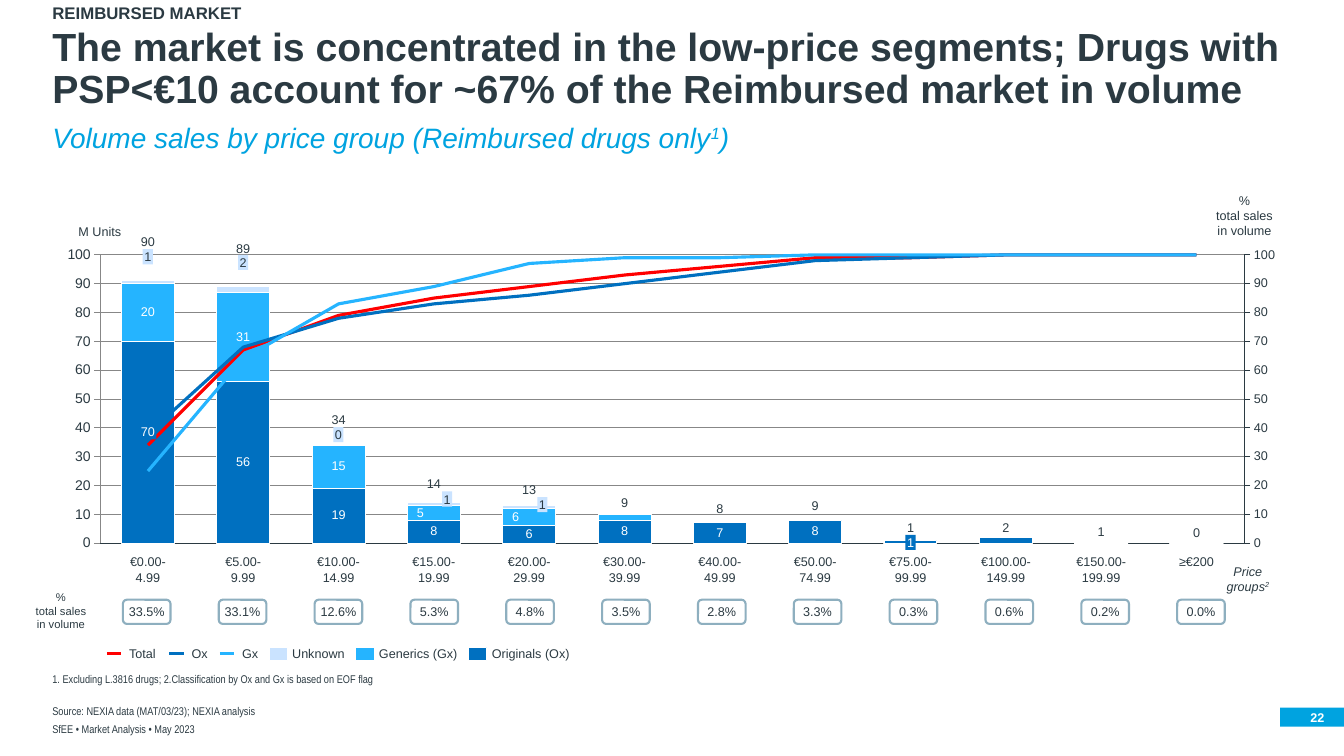
"""Build the slide on reimbursed volume sales by price group."""
from copy import deepcopy

from pptx import Presentation
from pptx import util as u
from pptx.chart import axis as ax, data as cd
from pptx.dml.color import RGBColor
from pptx.enum import chart as ce, shapes, text
from pptx.oxml import ns, parse_xml

INK, CYAN = RGBColor(0x2B, 0x3A, 0x42), RGBColor(0x00, 0xA3, 0xE0)
WHITE, RED = RGBColor(0xFF, 0xFF, 0xFF), RGBColor(0xFF, 0x00, 0x00)
BLUE, SKY = RGBColor(0x00, 0x70, 0xC0), RGBColor(0x25, 0xB4, 0xFF)
PALE, STEEL = RGBColor(0xCA, 0xE3, 0xFF), RGBColor(0x8E, 0xAF, 0xBF)
LEFT, CENTER, RIGHT = text.PP_ALIGN.LEFT, text.PP_ALIGN.CENTER, text.PP_ALIGN.RIGHT
TOP, MIDDLE, BOTTOM = text.MSO_ANCHOR.TOP, text.MSO_ANCHOR.MIDDLE, text.MSO_ANCHOR.BOTTOM

GROUPS = [("€0.00-\n4.99", "33.5%"), ("€5.00-\n9.99", "33.1%"), ("€10.00-\n14.99", "12.6%"),
          ("€15.00-\n19.99", "5.3%"), ("€20.00-\n29.99", "4.8%"), ("€30.00-\n39.99", "3.5%"),
          ("€40.00-\n49.99", "2.8%"), ("€50.00-\n74.99", "3.3%"), ("€75.00-\n99.99", "0.3%"),
          ("€100.00-\n149.99", "0.6%"), ("€150.00-\n199.99", "0.2%"), ("≥€200", "0.0%")]
TOTALS = [("90", 167), ("89", 172), ("34", 294.5), ("14", 340), ("13", 344), ("9", 353.5),
          ("8", 358), ("9", 355.5), ("1", 371.5), ("2", 371.5), ("1", 374.5), ("0", 375)]
CHIPS = [("70", 0, 0, 303, BLUE, WHITE), ("1", 0, 0, 178, PALE, INK), ("2", 1, 0, 182, PALE, INK),
         ("0", 2, 0, 305, PALE, INK), ("1", 3, 9.5, 351, PALE, INK),
         ("1", 4, 9.5, 355, PALE, INK), ("1", 8, 0, 382, BLUE, WHITE)]
COLUMNS = [("Originals (Ox)", [70, 56, 19, 8, 6, 8, 7, 8, 1, 2, 0, 0], BLUE, range(1, 8)),
           ("Generics (Gx)", [20, 31, 15, 5, 6, 2, 0, 0, 0, 0, 0, 0], SKY, range(5)),
           ("Unknown", [1, 2, 0, 1, 1, 0, 0, 0, 0, 0, 0, 0], PALE, ())]
LINES = [("Total", [34, 67, 79, 85, 89, 93, 96, 99, 99, 100, 100, 100], RED),
         ("Ox", [38, 68, 78, 83, 86, 90, 94, 98, 99, 100, 100, 100], BLUE),
         ("Gx", [25, 64, 83, 89, 97, 99, 99, 100, 100, 100, 100, 100], SKY)]


def look(size=9, color=INK, name="Arial", **more):
    return {"size": u.Pt(size), "name": name, "color": {"rgb": color}, **more}


def stroke(color, width=0.75):
    return {"color": {"rgb": color}, "width": u.Pt(width)}


def apply(target, values):
    for name, value in values.items():
        if isinstance(value, dict):
            apply(getattr(target, name), value)
        else:
            setattr(target, name, value)


def place(*lengths):
    return [u.Pt(n) for n in lengths]


def column_center(index):
    return 105.6 + 68.1 * index


def add_child(parent, tag, **values):
    parent.append(parent.makeelement(ns.qn(tag), values))


def write(frame, lines, font, align=LEFT, anchor=TOP, wrap=False, spacing=None):
    apply(frame, dict.fromkeys(("margin_left", "margin_right", "margin_top", "margin_bottom"), 0))
    apply(frame, {"word_wrap": wrap, "vertical_anchor": anchor,
                  "auto_size": text.MSO_AUTO_SIZE.NONE})
    for number, line in enumerate(lines):
        para = frame.add_paragraph() if number else frame.paragraphs[0]
        props = para._p.get_or_add_pPr()
        props.set("marL", "0")
        props.set("indent", "0")
        add_child(props, "a:buNone")
        apply(para, {"alignment": align, "line_spacing": spacing, "space_before": u.Pt(0)})
        for part, piece in enumerate(line.split("^")):
            for row, words in enumerate(piece.split("\n")):
                if row:
                    para.add_line_break()
                span = para.add_run()
                span.text = words
                apply(span.font, font)
                if part % 2:
                    span.font._element.set("baseline", "30000")
        for line_break in para._p.findall(ns.qn("a:br")):
            line_break.append(deepcopy(para.runs[0].font._element))


def add_text(page, box, lines, font, *options):
    write(page.shapes.add_textbox(*place(*box)).text_frame, lines, font, *options)


def add_block(page, box, fill, outline=None, kind=shapes.MSO_SHAPE.RECTANGLE):
    block = page.shapes.add_shape(kind, *place(*box))
    block.shadow.inherit = False
    block.fill.solid()
    block.fill.fore_color.rgb = fill
    block.line.fill.background()
    apply(block.line, outline or {})
    return block


def add_badge(page, index, share):
    badge = add_block(page, (87.8 + 68.46 * index, 428.4, 34, 17.3), WHITE, stroke(STEEL, 1.5),
                      shapes.MSO_SHAPE.ROUNDED_RECTANGLE)
    add_child(badge._element.spPr.find(".//" + ns.qn("a:srgbClr")), "a:alpha", val="70000")
    write(badge.text_frame, [share], look(), CENTER, MIDDLE)


def style_axis(axis, top):
    apply(axis, {"minimum_scale": 0, "maximum_scale": top, "major_unit": 10,
                 "has_major_gridlines": False, "major_tick_mark": ce.XL_TICK_MARK.OUTSIDE,
                 "tick_labels": {"number_format": "#,##0", "number_format_is_linked": False,
                                 "font": look()}, "format": {"line": stroke(INK)}})


def manual_layout(**values):
    items = "".join(f'<c:{name} val="{value}"/>' for name, value in values.items())
    return parse_xml(f'<c:layout {ns.nsdecls("c")}><c:manualLayout>{items}'
                     '</c:manualLayout></c:layout>')


def split_lines(chart):
    area = chart._chartSpace.chart.plotArea
    bars = area.find(ns.qn("c:barChart"))
    plot = parse_xml(f'<c:lineChart {ns.nsdecls("c")}><c:grouping val="standard"/>'
                     '<c:varyColors val="0"/><c:marker val="1"/>'
                     '<c:axId val="501"/><c:axId val="502"/></c:lineChart>')
    for series in bars.findall(ns.qn("c:ser"))[len(COLUMNS):]:
        for flag in series.findall(ns.qn("c:invertIfNegative")):
            series.remove(flag)
        plot.find(ns.qn("c:marker")).addprevious(series)
    bars.addnext(plot)
    category, value = deepcopy(chart.category_axis._element), deepcopy(chart.value_axis._element)
    for node, changes in ((category, {"axId": "501", "crossAx": "502", "delete": "1"}),
                          (value, {"axId": "502", "crossAx": "501", "axPos": "r", "crosses": "max"})):
        for tag, setting in changes.items():
            node.find(ns.qn("c:" + tag)).set("val", setting)
    chart.value_axis._element.addnext(value)
    value.addnext(category)
    for old in area.findall(ns.qn("c:layout")):
        area.remove(old)
    area.insert(0, manual_layout(layoutTarget="inner", xMode="edge", yMode="edge",
                                 x=0.03, y=0.032, w=0.934, h=0.935))
    return ax.ValueAxis(value)


def add_sales_chart(page):
    data = cd.CategoryChartData(number_format="0")
    data.categories = [str(n + 1) for n in range(len(GROUPS))]
    for name, values, *_ in COLUMNS + LINES:
        data.add_series(name, values)
    chart = page.shapes.add_chart(ce.XL_CHART_TYPE.COLUMN_STACKED,
                                  *place(45.4, 175, 874.8, 220.3), data).chart
    apply(chart, {"has_legend": False, "has_title": False, "font": look(10), "category_axis": {
        "tick_label_position": ce.XL_TICK_LABEL_POSITION.NONE,
        "major_tick_mark": ce.XL_TICK_MARK.NONE, "format": {"line": stroke(INK)}}})
    right_axis = split_lines(chart)
    style_axis(chart.value_axis, 90)
    style_axis(right_axis, 100)
    columns, lines = chart.plots
    apply(columns, {"gap_width": 80, "overlap": 100, "vary_by_categories": False})
    for series, (_, _, color, labelled) in zip(columns.series, COLUMNS):
        series.format.fill.solid()
        apply(series.format, {"fill": {"fore_color": {"rgb": color}}, "line": stroke(WHITE)})
        for index in labelled:
            label = series.points[index].data_label
            apply(label, {"font": look(color=WHITE), "position": ce.XL_LABEL_POSITION.CENTER})
            if color == SKY and index in (3, 4):
                label._dLbl.find(ns.qn("c:idx")).addnext(manual_layout(x=-0.011, y=0))
    for series, (_, _, color) in zip(lines.series, LINES):
        apply(series, {"smooth": False, "marker": {"style": ce.XL_MARKER_STYLE.NONE},
                       "format": {"line": stroke(color, 2.25)}})


def add_legend(page):
    for left, (name, _, color) in zip((76.3, 121, 157), LINES):
        key = page.shapes.add_connector(shapes.MSO_CONNECTOR.STRAIGHT,
                                        *place(left, 466.6, left + 10.4, 466.6))
        apply(key.line, stroke(color, 2.25))
        add_child(key._element.spPr, "a:effectLst")
        add_text(page, (left + 15.9, 461.5, 20, 10.8), [name], look(), LEFT, MIDDLE)
    for left, (name, _, color, _) in zip((334.8, 254.2, 192.2), COLUMNS):
        add_block(page, (left, 462.2, 13, 9.4), color, stroke(WHITE))
        add_text(page, (left + 16.5, 461.5, 57, 10.8), [name], look(), LEFT, MIDDLE)


def main():
    deck = Presentation()
    apply(deck, {"slide_width": u.Pt(960), "slide_height": u.Pt(540)})
    page = deck.slides.add_slide(deck.slide_layouts[4])
    note = look(8, name="Arial Narrow", bold=False)
    headings = [
        (18.7, 61.2, BOTTOM, look(28, bold=True), "The market is concentrated in the low-price segments; "
         "Drugs with PSP<€10 account for ~67% of the Reimbursed market in volume"),
        (3.6, 13, TOP, look(12, bold=True), "REIMBURSED MARKET"),
        (88.6, 21.6, TOP, look(20, CYAN, bold=False, italic=True),
         "Volume sales by price group (Reimbursed drugs only^1^)"),
        (481.7, 8.6, BOTTOM, note,
         "1. Excluding L.3816 drugs; 2.Classification by Ox and Gx is based on EOF flag"),
        (504, 8.6, BOTTOM, note, "Source: NEXIA data (MAT/03/23); NEXIA analysis")]
    for holder, (top, height, anchor, font, line) in zip(page.placeholders, headings):
        apply(holder, dict(zip(("left", "top", "width", "height"), place(37.4, top, 885.6, height))))
        write(holder.text_frame, [line], font, LEFT, anchor, True, 0.9)
    add_text(page, (37.4, 517, 595.4, 8.6), ["SfEE • Market Analysis • May 2023"], note,
             LEFT, BOTTOM, True, 0.9)
    add_block(page, (914.4, 505.4, 45.6, 13.7), CYAN)
    add_text(page, (914.4, 505.4, 31.7, 13.7), ["22"], look(color=WHITE, bold=True), RIGHT, MIDDLE, True)
    for index, (_, share) in enumerate(GROUPS):
        add_badge(page, index, share)
    add_sales_chart(page)
    for index, ((group, _), (total, top)) in enumerate(zip(GROUPS, TOTALS)):
        middle = column_center(index)
        add_text(page, (middle - 20, 396, 40, 21.6), [group], look(), CENTER)
        add_text(page, (middle - 6, top, 12, 10.8), [total], look(), CENTER, BOTTOM)
    for words, index, shift, top, fill, color in CHIPS:
        width = 2.2 + 5 * len(words)
        chip = add_block(page, (column_center(index) + shift - width / 2, top, width, 10.8), fill)
        write(chip.text_frame, [words], look(color=color), CENTER, MIDDLE)
    share_title = ["%", "total sales", "in volume"]
    add_text(page, (56.2, 159.8, 30.2, 10.8), ["M Units"], look(), CENTER, BOTTOM)
    add_text(page, (866.2, 137.5, 45.4, 32.4), share_title, look(), CENTER, BOTTOM)
    add_text(page, (20.9, 421.9, 45.4, 28.8), share_title, look(8), CENTER)
    add_text(page, (858.2, 402.5, 66.2, 21.6), ["Price", "groups^2^"], look(italic=True), CENTER)
    add_legend(page)
    deck.save("out.pptx")


if __name__ == "__main__":
    main()
